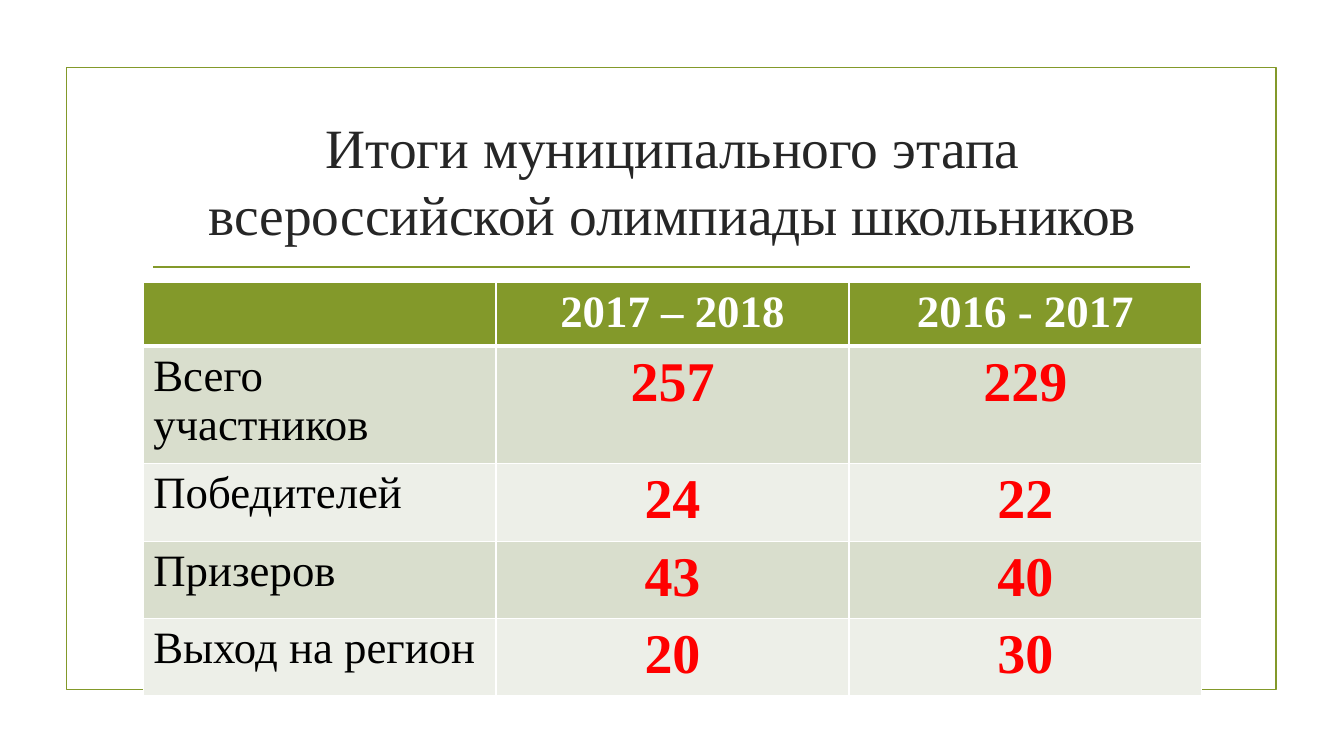
from lxml import etree
from pptx import Presentation
from pptx import util as u
from pptx.dml.color import RGBColor
from pptx.enum import shapes, text
from pptx.oxml import ns

OLIVE = RGBColor(0x83, 0x99, 0x2A)
SAGE = RGBColor(0xD9, 0xDE, 0xCD)
PALE = RGBColor(0xED, 0xEF, 0xE8)
WHITE = RGBColor(0xFF, 0xFF, 0xFF)
BLACK = RGBColor(0, 0, 0)
DARK = RGBColor(0x26, 0x26, 0x26)
RED = RGBColor(0xFF, 0, 0)
FONT = "Times New Roman"
WIDE, HIGH = u.Inches(13.33), u.Inches(7.5)
ROWS = [
    ("", "2017 – 2018", "2016 - 2017"),
    ("Всего участников", "257", "229"),
    ("Победителей", "24", "22"),
    ("Призеров", "43", "40"),
    ("Выход на регион", "20", "30"),
]
TALL = [0.59, 1.08, 0.71, 0.71, 0.71]


def write(frame, words, size=32, color=BLACK, bold=False, align=text.PP_ALIGN.CENTER):
    """Put formatted words into a text frame."""
    para = frame.paragraphs[0]
    para.alignment = align
    run = para.add_run()
    run.text = words
    font = run.font
    font.name, font.size, font.bold = FONT, u.Pt(size), bold
    font.color.rgb = color


def edge(cell, head):
    """Draw the white borders of a cell, thick under the header."""
    props = cell._tc.get_or_add_tcPr()
    for spot, side in enumerate("LRTB"):
        thick = 3 if head and side == "B" else 1
        line = etree.Element(ns.qn(f"a:ln{side}"), w=str(u.Pt(thick)))
        fill = etree.SubElement(line, ns.qn("a:solidFill"))
        etree.SubElement(fill, ns.qn("a:srgbClr"), val=str(WHITE))
        props.insert(spot, line)


def frame(slide, left, top, width, height):
    """Draw the olive frame and the rule under the title."""
    box = slide.shapes.add_shape(shapes.MSO_SHAPE.RECTANGLE, left, top, width, height)
    box.shadow.inherit = False
    box.fill.background()
    inset, drop = u.Inches(0.86), top + u.Inches(1.98)
    rule = slide.shapes.add_connector(
        shapes.MSO_CONNECTOR.STRAIGHT, left + inset, drop, left + width - inset, drop)
    etree.SubElement(rule._element.spPr, ns.qn("a:effectLst"))
    for item in (box, rule):
        item.line.color.rgb = OLIVE
        item.line.width = u.Pt(1.25)


def title(slide, words, left, top, width, height):
    """Place the centred title."""
    area = slide.shapes.add_textbox(left, top, width, height).text_frame
    area.word_wrap = True
    area.vertical_anchor = text.MSO_ANCHOR.MIDDLE
    write(area, words, size=39.6, color=DARK)


def table(slide, left, top, width, height):
    """Place the results table, its rows sharing the height."""
    grid = slide.shapes.add_table(len(ROWS), len(ROWS[0]), left, top, width, height).table
    for r, row in enumerate(ROWS):
        grid.rows[r].height = int(height * TALL[r] / sum(TALL))
        for c, words in enumerate(row):
            cell = grid.cell(r, c)
            cell.fill.solid()
            cell.fill.fore_color.rgb = (SAGE if r % 2 else PALE) if r else OLIVE
            edge(cell, r == 0)
            if r == 0:
                look = dict(color=WHITE, bold=True)
            elif c == 0:
                look = dict(align=text.PP_ALIGN.LEFT)
            else:
                look = dict(size=40, color=RED, bold=True)
            if words:
                write(cell.text_frame, words, **look)


def main():
    """Build and save the slide."""
    deck = Presentation()
    deck.slide_width, deck.slide_height = WIDE, HIGH
    slide = deck.slides.add_slide(deck.slide_layouts[6])
    left, width = u.Inches(1.42), u.Inches(10.5)
    frame(slide, u.Inches(0.66), u.Inches(0.67), u.Inches(12), u.Inches(6.17))
    title(slide, "Итоги муниципального этапа всероссийской олимпиады школьников",
          left, u.Inches(1.07), width, u.Inches(1.43))
    table(slide, left, u.Inches(2.8), width, u.Inches(sum(TALL)))
    deck.save("out.pptx")


if __name__ == "__main__":
    main()
